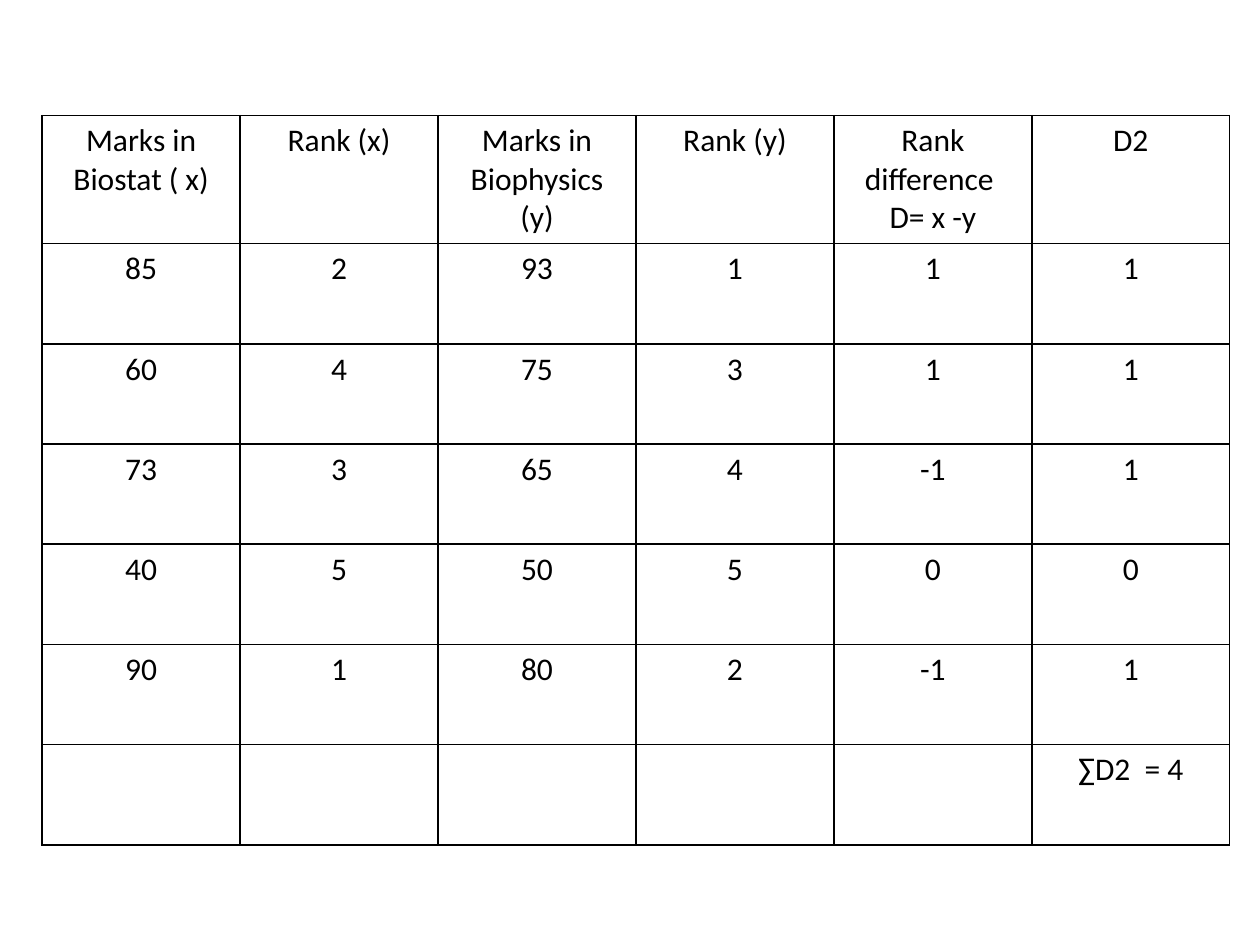
from lxml.etree import SubElement
from pptx import Presentation
from pptx.dml.color import RGBColor
from pptx.enum.text import PP_ALIGN
from pptx.oxml.ns import qn
from pptx.util import Cm, Pt

ROWS = [
    ["Marks in Biostat ( x)", "Rank (x)", "Marks in Biophysics (y)",
     "Rank (y)", "Rank difference \nD= x -y", "D2"],
    ["85", "2", "93", "1", "1", "1"],
    ["60", "4", "75", "3", "1", "1"],
    ["73", "3", "65", "4", "-1", "1"],
    ["40", "5", "50", "5", "0", "0"],
    ["90", "1", "80", "2", "-1", "1"],
    ["", "", "", "", "", "∑D2  = 4"],
]
WIDE, HIGH = Cm(3.99), Cm(2.02)


def write(cell, text, size=18, font="Calibri", color="000000",
          align=PP_ALIGN.CENTER):
    cell.text = text
    for para in cell.text_frame.paragraphs:
        para.alignment = align
        para.font.size = Pt(size)
        for run in para.runs:
            run.font.size = Pt(size)
            run.font.name = font
            run.font.color.rgb = RGBColor.from_string(color)


def frame(cell, color="000000", width=1):
    """Draw all four borders; they must come before the fill in the XML."""
    props = cell._tc.get_or_add_tcPr()
    for spot, side in enumerate(("lnL", "lnR", "lnT", "lnB")):
        line = SubElement(props, qn(f"a:{side}"), w=str(Pt(width)))
        fill = SubElement(line, qn("a:solidFill"))
        SubElement(fill, qn("a:srgbClr"), val=color)
        props.insert(spot, line)


deck = Presentation()
deck.slide_width, deck.slide_height = Cm(25.4), Cm(19.05)
slide = deck.slides.add_slide(deck.slide_layouts[6])

count, span = len(ROWS), len(ROWS[0])
table = slide.shapes.add_table(count, span, Cm(0.85), Cm(2.33),
                               WIDE * span, HIGH * count).table
table.first_row = table.horz_banding = False
for col in table.columns:
    col.width = WIDE
for row, texts in zip(table.rows, ROWS):
    row.height = HIGH
    for cell, text in zip(row.cells, texts):
        write(cell, text)
        cell.fill.background()
        frame(cell)

deck.save("out.pptx")
